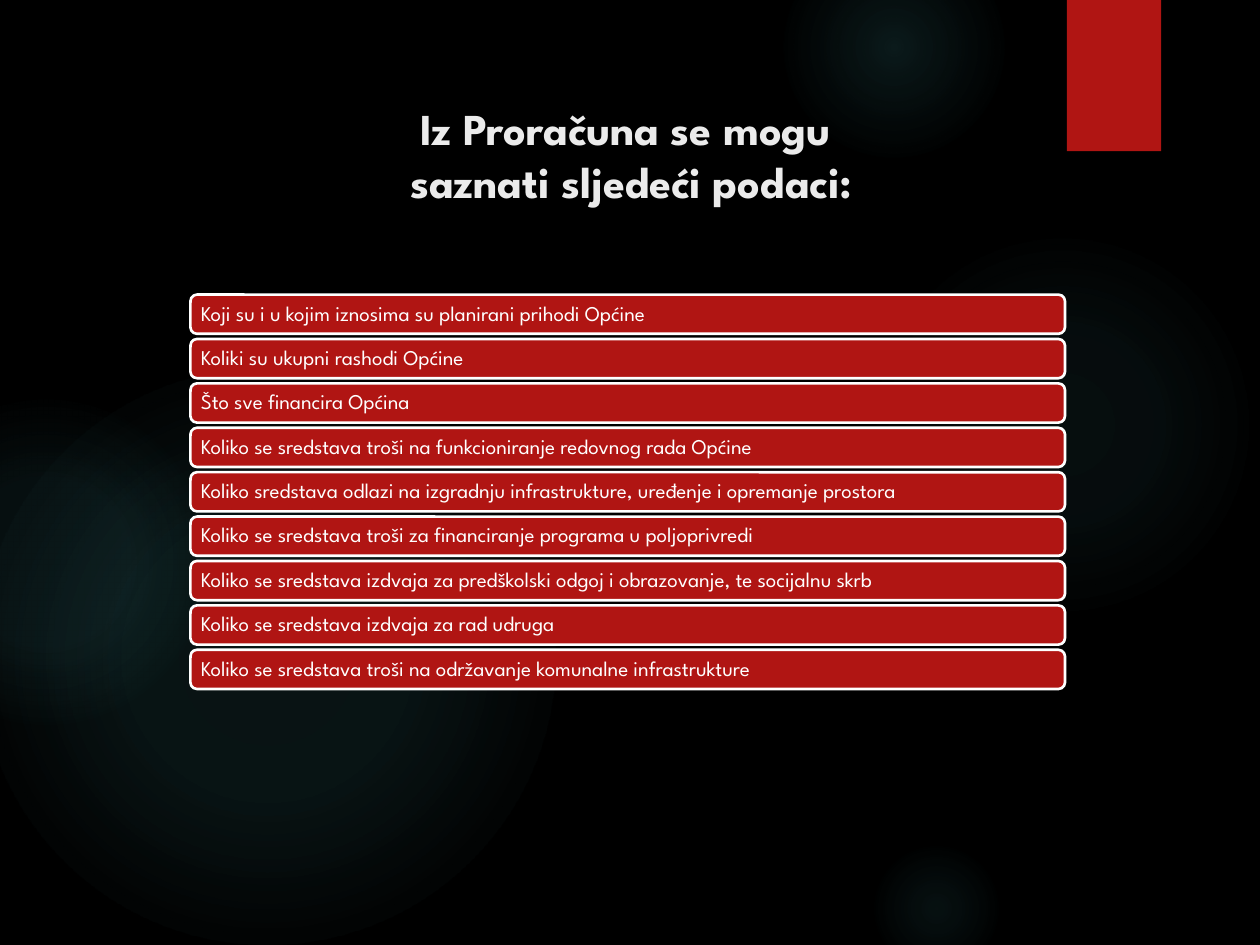
import copy
from dataclasses import dataclass

import lxml.etree
import pptx
import pptx.dml.color
import pptx.enum.shapes
import pptx.enum.text
import pptx.oxml
import pptx.oxml.ns
import pptx.util

Cm = pptx.util.Cm
Pt = pptx.util.Pt
SHAPES = pptx.enum.shapes.MSO_SHAPE
ALIGN = pptx.enum.text.PP_ALIGN
ANCHOR = pptx.enum.text.MSO_ANCHOR
NAMESPACE = pptx.oxml.ns.nsdecls("a")


@dataclass(frozen=True)
class Theme:
    background: str = "000000"
    glow: str = "50B9C1"
    accent: str = "B01513"
    outline: str = "FFFFFF"
    title_color: str = "EBEBEB"
    body_color: str = "FFFFFF"
    font: str = "League Spartan"
    title_size: float = 25.2
    body_size: float = 12


# left, top, diameter in cm; then (position %, opacity %) of each gradient stop
GLOWS = [
    (17.5, 4.65, 7.82, [(0, 7), (36, 6), (69, 0)]),
    (15.8, -1.27, 4.45, [(0, 14), (36, 7), (73, 0)]),
    (17.5, 16.94, 2.74, [(0, 9), (36, 5), (66, 0)]),
    (-0.43, 7.42, 11.63, [(0, 11), (36, 10), (75, 0)]),
    (-2.34, 8.05, 6.55, [(0, 8), (36, 8), (72, 0)]),
]

TITLE = "Iz Proračuna se mogu \vsaznati sljedeći podaci:"

QUESTIONS = [
    "Koji su i u kojim iznosima su planirani prihodi Općine",
    "Koliki su ukupni rashodi Općine",
    "Što sve financira Općina",
    "Koliko se sredstava troši na funkcioniranje redovnog rada Općine",
    "Koliko sredstava odlazi na izgradnju infrastrukture, uređenje i opremanje prostora",
    "Koliko se sredstava troši za financiranje programa u poljoprivredi",
    "Koliko se sredstava izdvaja za predškolski odgoj i obrazovanje, te socijalnu skrb",
    "Koliko se sredstava izdvaja za rad udruga",
    "Koliko se sredstava troši na održavanje komunalne infrastrukture",
]
FIRST_BAR_TOP, LAST_BAR_TOP = 5.94, 13.1


def rgb(color):
    return pptx.dml.color.RGBColor.from_string(color)


def write_text(frame, text, *, font, size, color, bold=False,
               align=ALIGN.LEFT, line_spacing=1.0, inset=0.13):
    frame.word_wrap = True
    frame.auto_size = pptx.enum.text.MSO_AUTO_SIZE.NONE
    frame.vertical_anchor = ANCHOR.MIDDLE
    frame.margin_left = frame.margin_right = Cm(inset)
    frame.margin_top = frame.margin_bottom = Cm(0.13)
    frame.text = text
    para = frame.paragraphs[0]
    para.alignment = align
    para.line_spacing = line_spacing
    for span in para.runs:
        span.font.name = font
        span.font.size = Pt(size)
        span.font.bold = bold
        span.font.color.rgb = rgb(color)
    # A line break takes the format of the text, so that both lines are equally high.
    for line_break in para.line_breaks if hasattr(para, "line_breaks") else \
            frame._txBody.iter(pptx.oxml.ns.qn("a:br")):
        line_break.append(copy.deepcopy(para.runs[0].font._element))


class SlideBuilder:
    def __init__(self, deck, theme):
        self.theme = theme
        self.page = deck.slides.add_slide(deck.slide_layouts[5])
        fill = self.page.background.fill
        fill.solid()
        fill.fore_color.rgb = rgb(theme.background)

    def shape(self, kind, left, top, width, height):
        box = self.page.shapes.add_shape(kind, Cm(left), Cm(top), Cm(width), Cm(height))
        box.shadow.inherit = False
        box.fill.solid()
        box.fill.fore_color.rgb = rgb(self.theme.accent)
        box.line.fill.background()
        return box

    def glow(self, left, top, diameter, stops):
        box = self.shape(SHAPES.OVAL, left, top, diameter, diameter)
        stop_xml = "".join(
            f'<a:gs pos="{position * 1000}"><a:srgbClr val="{self.theme.glow}">'
            f'<a:alpha val="{opacity * 1000}"/></a:srgbClr></a:gs>'
            for position, opacity in stops)
        gradient = pptx.oxml.parse_xml(
            f'<a:gradFill {NAMESPACE} rotWithShape="1"><a:gsLst>{stop_xml}</a:gsLst>'
            '<a:path path="circle"><a:fillToRect l="50000" t="50000" r="50000" b="50000"/>'
            '</a:path></a:gradFill>')
        solid = box.element.spPr.find(pptx.oxml.ns.qn("a:solidFill"))
        solid.getparent().replace(solid, gradient)

    def ribbon(self, left, top, width, height):
        box = self.shape(SHAPES.RECTANGLE, left, top, width, height)
        effects = box.element.spPr.find(pptx.oxml.ns.qn("a:effectLst"))
        effects.append(pptx.oxml.parse_xml(
            f'<a:outerShdw {NAMESPACE} blurRad="{Pt(3)}" dist="{Pt(2)}" dir="5400000" '
            'rotWithShape="0"><a:srgbClr val="000000"><a:alpha val="45000"/></a:srgbClr>'
            '</a:outerShdw>'))

    def title(self, text, left, top, width, height):
        box = self.page.shapes.title
        box.left, box.top, box.width, box.height = map(Cm, (left, top, width, height))
        box.element.getparent().append(box.element)  # in front of the glows
        write_text(box.text_frame, text, font=self.theme.font, size=self.theme.title_size,
                   color=self.theme.title_color, bold=True, align=ALIGN.CENTER, inset=0.25)

    def bar(self, text, left, top, width, height):
        box = self.shape(SHAPES.ROUNDED_RECTANGLE, left, top, width, height)
        box.line.color.rgb = rgb(self.theme.outline)
        box.line.width = Pt(1.5)
        write_text(box.text_frame, text, font=self.theme.font, size=self.theme.body_size,
                   color=self.theme.body_color, line_spacing=0.9, inset=0.17)


def main():
    deck = pptx.Presentation()
    deck.slide_width, deck.slide_height = Cm(25.4), Cm(19.05)
    builder = SlideBuilder(deck, Theme())
    for glow in GLOWS:
        builder.glow(*glow)
    builder.ribbon(21.51, 0, 1.9, 3.05)
    builder.title(TITLE, 1.3, 1.93, 22.86, 2.36)
    pitch = (LAST_BAR_TOP - FIRST_BAR_TOP) / (len(QUESTIONS) - 1)
    for index, question in enumerate(QUESTIONS):
        builder.bar(question, 3.84, FIRST_BAR_TOP + index * pitch, 17.63, 0.79)
    deck.save("out.pptx")


if __name__ == "__main__":
    main()
